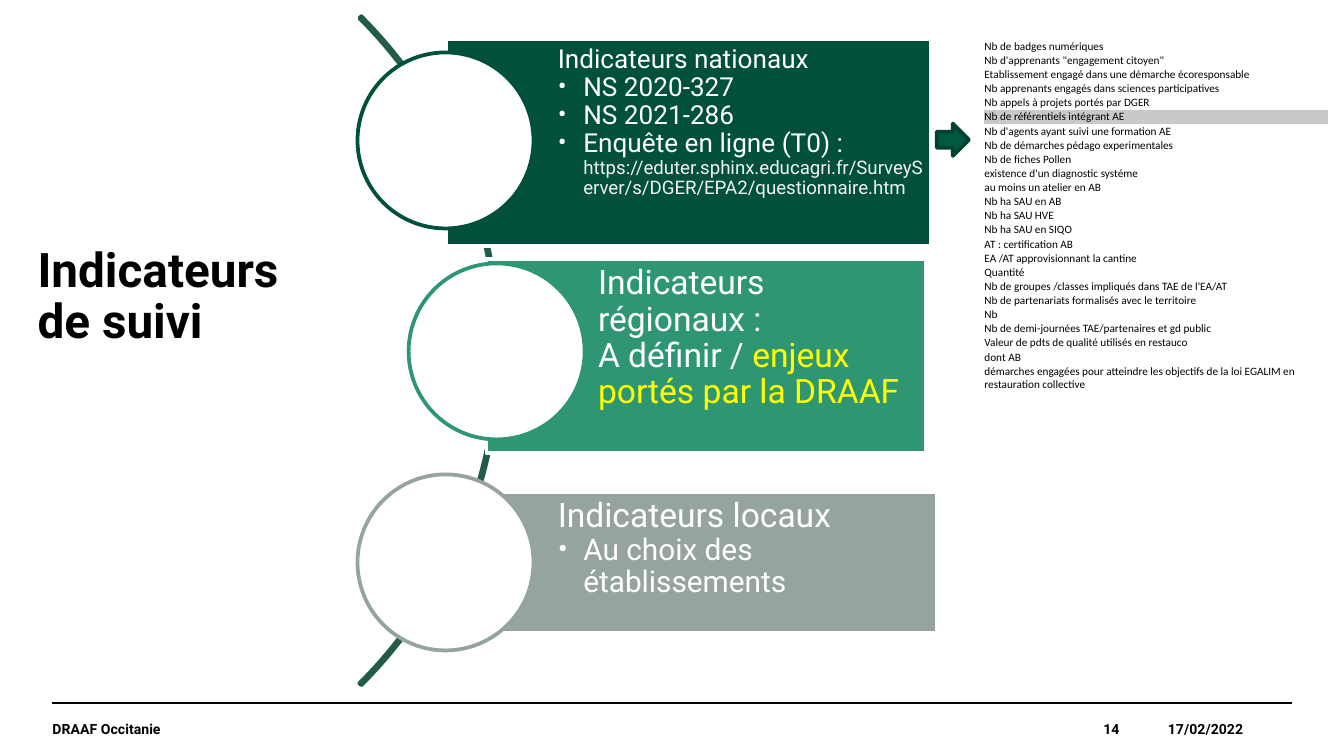
from lxml import etree
from pptx import Presentation
from pptx.dml.color import RGBColor
from pptx.enum import shapes, text
from pptx.oxml import ns
from pptx.util import Inches, Pt

HUES = {"ink": "000000", "white": "FFFFFF", "dark": "00503B", "mid": "2E9772",
        "grey": "95A49D", "arc": "225C47", "tip": "005841", "edge": "004130",
        "pale": "F2F2F2", "sun": "FFFF00", "mark": "C9C9C9"}
KIND = shapes.MSO_SHAPE
SIDE = text.PP_ALIGN
ANCHOR = text.MSO_ANCHOR
PLAIN_STYLE = "{2D5ABB26-0587-4C30-8999-92F81FD0307C}"
HAIR = Inches(0.01) // 2

# Each band: box, circle left and top, hue, paragraphs of (bullet, runs)
BANDS = [
    ((3.32, 0.29, 3.61, 1.54), (2.66, 0.39), "dark", [
        (False, [("Indicateurs nationaux", 14, "white")]),
        (True, [("NS 2020-327", 14, "white")]),
        (True, [("NS 2021-286", 14, "white")]),
        (True, [("Enquête en ligne (T0) : ", 14, "white"),
                ("https://eduter.sphinx.educagri.fr/SurveyServer/s/DGER/EPA2/"
                 "questionnaire.htm", 10, "pale")])]),
    ((3.62, 1.93, 3.27, 1.44), (3.04, 1.96), "mid", [
        (False, [("Indicateurs régionaux :", 18, "white")]),
        (False, [("A définir / ", 18, "white"),
                 ("enjeux portés par la DRAAF", 18, "sun")])]),
    ((3.32, 3.66, 3.65, 1.05), (2.66, 3.53), "grey", [
        (False, [("Indicateurs locaux", 18, "white")]),
        (True, [("Au choix des établissements", 16, "white")])]),
]
ITEMS = [
    "Nb de badges numériques",
    "Nb d'apprenants \"engagement citoyen\"",
    "Etablissement engagé dans une démarche écoresponsable",
    "Nb apprenants engagés dans sciences participatives",
    "Nb appels à projets portés par DGER",
    "Nb de référentiels intégrant AE",
    "Nb d'agents ayant suivi une formation AE",
    "Nb de démarches pédago experimentales",
    "Nb de fiches Pollen",
    "existence d'un diagnostic systéme",
    "au moins un atelier en AB",
    "Nb ha SAU en AB",
    "Nb ha SAU HVE",
    "Nb ha SAU en SIQO",
    "AT : certification AB",
    "EA /AT approvisionnant la cantine",
    "Quantité",
    "Nb de groupes /classes impliqués dans TAE de l'EA/AT",
    "Nb de partenariats formalisés avec le territoire",
    "Nb",
    "Nb de demi-journées TAE/partenaires et gd public",
    "Valeur de pdts de qualité utilisés en restauco",
    "dont AB",
    "démarches engagées pour atteindre les objectifs de la loi EGALIM en "
    "restauration collective",
]
MARKED = "Nb de référentiels intégrant AE"


def hue(name):
    return RGBColor.from_string(HUES[name])


def apply(thing, values):
    for name, value in values.items():
        setattr(thing, name, value)


def insets(left, top, right, bottom):
    return {"margin_left": left, "margin_top": top,
            "margin_right": right, "margin_bottom": bottom}


def write(para, words, size, color="ink", face="Roboto", bold=False):
    run = para.add_run()
    run.text = words
    apply(run.font, {"size": Pt(size), "name": face, "bold": bold})
    run.font.color.rgb = hue(color)


def bullet(para):
    props = para._p.get_or_add_pPr()
    step = Inches(0.19)
    for name, value in {"marL": step, "indent": -step, "lvl": 1}.items():
        props.set(name, str(value))
    etree.SubElement(props, ns.qn("a:buFont")).set("typeface", "Roboto")
    etree.SubElement(props, ns.qn("a:buChar")).set("char", "•")


def label(slide, box, words, size, anchor=ANCHOR.MIDDLE, **form):
    frame = slide.shapes.add_textbox(*map(Inches, box)).text_frame
    apply(frame, {"word_wrap": True, "vertical_anchor": anchor,
                  **insets(0, 0, 0, 0)})
    para = frame.paragraphs[0]
    apply(para, form)
    write(para, words, size, bold=True)


def draw(slide, kind, box, fill, line):
    shape = slide.shapes.add_shape(kind, *map(Inches, box))
    shape.shadow.inherit = False
    if fill:
        shape.fill.solid()
        shape.fill.fore_color.rgb = hue(fill)
    else:
        shape.fill.background()
    shape.line.color.rgb = hue(line)
    shape.line.width = Pt(2)
    return shape


def band(slide, box, spot, tone, paras):
    """Place a text panel with its circle on the left."""
    frame = draw(slide, KIND.RECTANGLE, box, tone, "white").text_frame
    apply(frame, {"word_wrap": True, "vertical_anchor": ANCHOR.TOP,
                  **insets(*map(Inches, (0.83, 0.05, 0.05, 0.05)))})
    for n, (dotted, runs) in enumerate(paras):
        para = frame.add_paragraph() if n else frame.paragraphs[0]
        if dotted:
            bullet(para)
        apply(para, {"alignment": SIDE.LEFT, "line_spacing": 0.9})
        for run in runs:
            write(para, *run)
    draw(slide, KIND.OVAL, (*spot, 1.31, 1.31), "white", tone)


def arc(slide, box):
    shape = draw(slide, KIND.BLOCK_ARC, box, None, "arc")
    for n, value in enumerate((189, 27, 0.003)):
        shape.adjustments[n] = value


def listing(slide, box):
    """Place the one-column table of indicators."""
    frame = slide.shapes.add_table(len(ITEMS), 1, *map(Inches, box))
    table = frame.table
    apply(table, {"first_row": False, "horz_banding": False})
    table._tbl.tblPr.find(ns.qn("a:tableStyleId")).text = PLAIN_STYLE
    for row, item in zip(table.rows, ITEMS):
        row.height = Inches(0.12 if item == ITEMS[-1] else 0.07)
        cell = row.cells[0]
        apply(cell, {"vertical_anchor": ANCHOR.BOTTOM,
                     **insets(HAIR, HAIR, HAIR, 0)})
        if item == MARKED:
            cell.fill.solid()
            cell.fill.fore_color.rgb = hue("mark")
        else:
            cell.fill.background()
        write(cell.text_frame.paragraphs[0], item, 6, face="Calibri")
    frame.height = Inches(box[3])


def footer(slide, left, top, width, height):
    rule = slide.shapes.add_connector(
        shapes.MSO_CONNECTOR.STRAIGHT,
        *map(Inches, (left, top, left + width, top)))
    rule.line.color.rgb = hue("ink")
    rule.line.width = Pt(0.8)
    etree.SubElement(rule._element.spPr, ns.qn("a:effectLst"))
    for words, wide, side in (("DRAAF Occitanie", 6.46, SIDE.LEFT),
                              ("14", 1.48, SIDE.RIGHT),
                              ("17/02/2022", 1.28, SIDE.CENTER)):
        label(slide, (left, top, wide, height), words, 7.5, alignment=side)
        left += wide


def main():
    deck = Presentation()
    wide = Inches(10)
    apply(deck, {"slide_width": wide, "slide_height": wide * 9 // 16})
    slide = deck.slides.add_slide(deck.slide_layouts[6])
    footer(slide, 0.39, 5.23, 9.22, 0.39)
    label(slide, (0.28, 1.83, 2.13, 0.79), "Indicateurs de suivi", 25.5,
          ANCHOR.TOP, line_spacing=0.9)
    arc(slide, (-3.32, -0.91, 7.04, 7.04))
    for part in BANDS:
        band(slide, *part)
    listing(slide, (7.32, 0.29, 2.56, 2.64))
    draw(slide, KIND.RIGHT_ARROW, (6.97, 0.92, 0.24, 0.24), "tip", "edge")
    deck.save("out.pptx")


if __name__ == "__main__":
    main()
